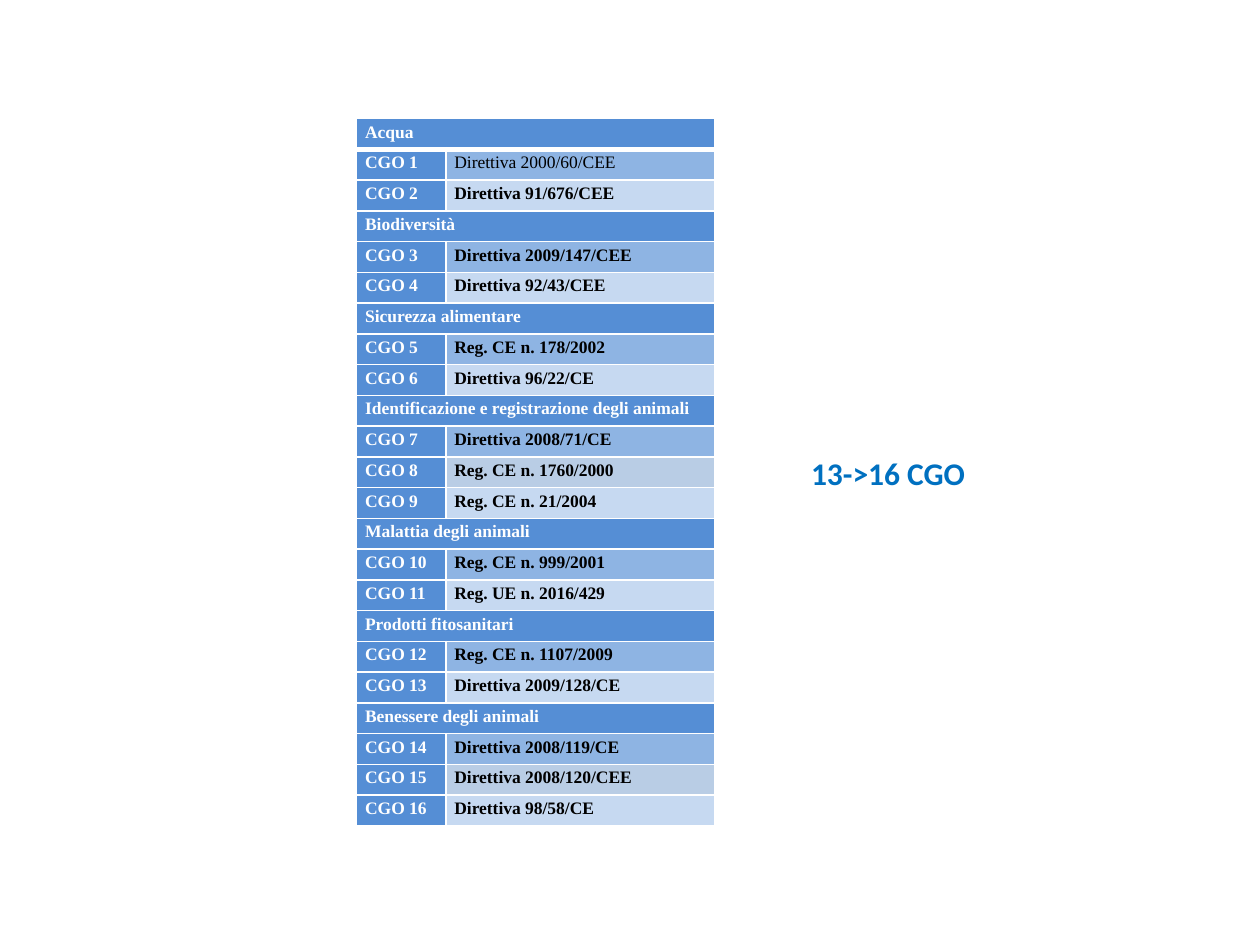
from lxml import etree
from pptx import Presentation
from pptx import util as u
from pptx.dml.color import RGBColor
from pptx.enum import text
from pptx.oxml.ns import qn

COLORS = {
    "header": "558ED5",
    "first": "8EB4E3",
    "middle": "B9CDE5",
    "last": "C6D9F1",
    "white": "FFFFFF",
    "black": "000000",
    "accent": "0070C0",
}
GROUPS = {
    "Acqua": ["Direttiva 2000/60/CEE", "Direttiva 91/676/CEE"],
    "Biodiversità": ["Direttiva 2009/147/CEE", "Direttiva 92/43/CEE"],
    "Sicurezza alimentare": ["Reg. CE n. 178/2002", "Direttiva 96/22/CE"],
    "Identificazione e registrazione degli animali": [
        "Direttiva 2008/71/CE", "Reg. CE n. 1760/2000", "Reg. CE n. 21/2004"],
    "Malattia degli animali": ["Reg. CE n. 999/2001", "Reg. UE n. 2016/429"],
    "Prodotti fitosanitari": ["Reg. CE n. 1107/2009", "Direttiva 2009/128/CE"],
    "Benessere degli animali": [
        "Direttiva 2008/119/CE", "Direttiva 2008/120/CEE", "Direttiva 98/58/CE"],
}
COLUMN_WIDTHS = [1.8, 5.41]
ROW_HEIGHT = 0.62
CELL_FORMAT = {
    "margin_left": u.Cm(0.17), "margin_right": u.Cm(0.17),
    "margin_top": u.Cm(0.08), "margin_bottom": u.Cm(0.08),
}


def write(frame, words, color, **font_format):
    paragraph = frame.paragraphs[0]
    run = paragraph.add_run()
    run.text = words
    for name, value in font_format.items():
        setattr(run.font, name, value)
    run.font.color.rgb = RGBColor.from_string(COLORS[color])


def style_cell(cell, words, fill, color, bold=True, bottom=1):
    # Borders come before the fill in the cell properties
    properties = cell._tc.get_or_add_tcPr()
    for side, width in {"L": 1, "R": 1, "T": 1, "B": bottom}.items():
        line = etree.SubElement(properties, qn(f"a:ln{side}"), w=str(u.Pt(width)))
        solid = etree.SubElement(line, qn("a:solidFill"))
        etree.SubElement(solid, qn("a:srgbClr"), val=COLORS["white"])
    cell.fill.solid()
    cell.fill.fore_color.rgb = RGBColor.from_string(COLORS[fill])
    for name, value in CELL_FORMAT.items():
        setattr(cell, name, value)
    if words:
        write(cell.text_frame, words, color, name="Times New Roman",
              size=u.Pt(10), bold=bold)


presentation = Presentation()
presentation.slide_width = u.Cm(25.4)
presentation.slide_height = u.Cm(19.05)
slide = presentation.slides.add_slide(presentation.slide_layouts[6])

# Note beside the table
note = slide.shapes.add_textbox(u.Cm(16.1), u.Cm(9.02), u.Cm(3.63), u.Cm(1.02))
note.text_frame.word_wrap = False
note.text_frame.auto_size = text.MSO_AUTO_SIZE.SHAPE_TO_FIT_TEXT
write(note.text_frame, "13->16 CGO", "accent", name="Calibri",
      size=u.Pt(18), bold=True)

# Table grid
row_count = sum(1 + len(rules) for rules in GROUPS.values())
table = slide.shapes.add_table(
    row_count, 2, u.Cm(7.19), u.Cm(2.39),
    u.Cm(sum(COLUMN_WIDTHS)), u.Cm(ROW_HEIGHT * row_count)).table
for column, width in zip(table.columns, COLUMN_WIDTHS):
    column.width = u.Cm(width)
for row in table.rows:
    row.height = u.Cm(ROW_HEIGHT)

# One merged heading per group, then its numbered rules
row_index = 0
rule_number = 0
for heading, rules in GROUPS.items():
    bottom = 3 if row_index == 0 else 1
    table.cell(row_index, 0).merge(table.cell(row_index, 1))
    style_cell(table.cell(row_index, 0), heading, "header", "white", bottom=bottom)
    style_cell(table.cell(row_index, 1), "", "header", "white", bottom=bottom)
    row_index += 1
    shades = ["first"] + ["middle"] * (len(rules) - 2) + ["last"]
    for rule, shade in zip(rules, shades):
        rule_number += 1
        style_cell(table.cell(row_index, 0), f"CGO {rule_number}", "header", "white")
        style_cell(table.cell(row_index, 1), rule, shade, "black",
                   bold=rule_number > 1)
        row_index += 1

presentation.save("out.pptx")
